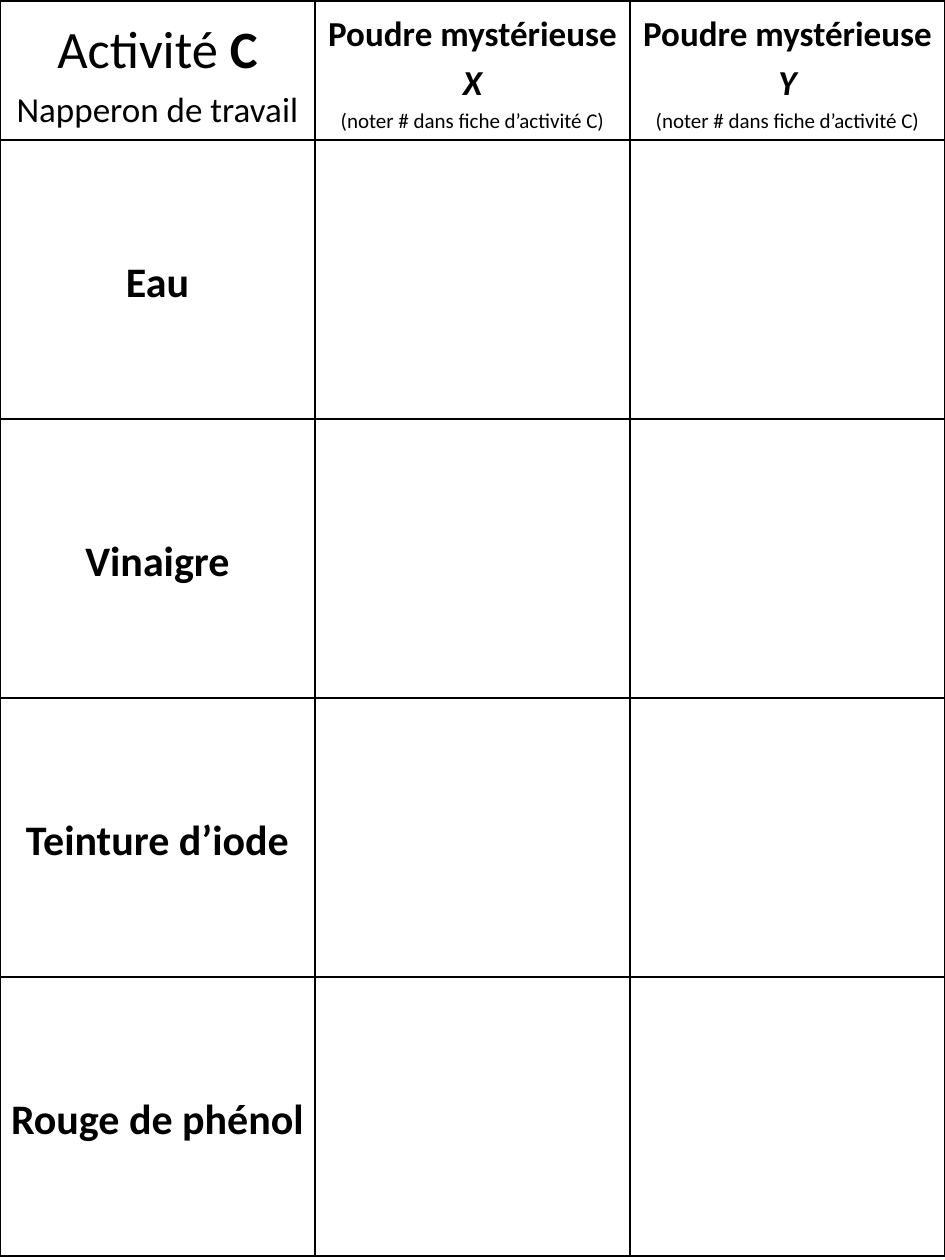
"""Build the Activité C worksheet: three columns for testing two mystery powders."""
import pptx
import pptx.dml.color
import pptx.enum.text
import pptx.oxml.ns
import pptx.util
from lxml import etree

Inches, Pt = pptx.util.Inches, pptx.util.Pt
BLACK = pptx.dml.color.RGBColor(0, 0, 0)

TITLE = {"size": Pt(30)}
TITLE_BOLD = {"size": Pt(30), "bold": True}
SUBTITLE = {"size": Pt(20)}
POWDER = {"size": Pt(20), "bold": True}
POWDER_LETTER = {"size": Pt(20), "bold": True, "italic": True}
NOTE = {"size": Pt(12)}
REAGENT = {"size": Pt(24), "bold": True}

ACTIVITY = [
    [("Activité ", TITLE), ("C", TITLE_BOLD)],
    [("Napperon de travail", SUBTITLE)],
]
POWDERS = ["X", "Y"]
REAGENTS = ["Eau", "Vinaigre", "Teinture d’iode", "Rouge de phénol"]

LEFT, TOP = 0, 0.01
COLUMN_WIDTH = 2.5
HEADER_HEIGHT, REAGENT_HEIGHT = 1.1, 2.215
BORDER_WIDTH = Pt(1)
CELL_FORMAT = {
    "vertical_anchor": pptx.enum.text.MSO_ANCHOR.MIDDLE,
    "margin_left": Inches(0.01),
    "margin_right": Inches(0.01),
    "margin_top": 0,
    "margin_bottom": 0,
}


def powder_heading(letter):
    return [
        [("Poudre mystérieuse ", POWDER), (letter, POWDER_LETTER)],
        [("(noter # dans fiche d’activité C)", NOTE)],
    ]


def add_borders(cell):
    qn = pptx.oxml.ns.qn
    properties = cell._tc.get_or_add_tcPr()
    for side in ("a:lnL", "a:lnR", "a:lnT", "a:lnB"):
        line = etree.SubElement(properties, qn(side), w=str(BORDER_WIDTH))
        fill = etree.SubElement(line, qn("a:solidFill"))
        etree.SubElement(fill, qn("a:srgbClr"), val=str(BLACK))


def write_cell(cell, lines):
    for index, runs in enumerate(lines):
        frame = cell.text_frame
        paragraph = frame.add_paragraph() if index else frame.paragraphs[0]
        paragraph.alignment = pptx.enum.text.PP_ALIGN.CENTER
        paragraph.line_spacing = 1.15
        for text, style in runs:
            run = paragraph.add_run()
            run.text = text
            run.font.color.rgb = BLACK
            font_format = {"name": "Calibri", "bold": False, "italic": False, **style}
            for attribute, value in font_format.items():
                setattr(run.font, attribute, value)


def main():
    deck = pptx.Presentation()
    deck.slide_width, deck.slide_height = Inches(7.5), Inches(10)
    worksheet = deck.slides.add_slide(deck.slide_layouts[6])

    rows = [[ACTIVITY] + [powder_heading(letter) for letter in POWDERS]]
    rows += [[[[(name, REAGENT)]]] + [[] for _ in POWDERS] for name in REAGENTS]
    heights = [HEADER_HEIGHT] + [REAGENT_HEIGHT] * len(REAGENTS)
    columns = len(rows[0])

    grid = worksheet.shapes.add_table(
        len(rows), columns, Inches(LEFT), Inches(TOP),
        Inches(COLUMN_WIDTH * columns), Inches(sum(heights)),
    ).table
    grid.first_row = grid.horz_banding = False
    for column in grid.columns:
        column.width = Inches(COLUMN_WIDTH)
    for row, height, contents in zip(grid.rows, heights, rows):
        row.height = Inches(height)
        for cell, lines in zip(row.cells, contents):
            for attribute, value in CELL_FORMAT.items():
                setattr(cell, attribute, value)
            add_borders(cell)
            cell.fill.background()
            write_cell(cell, lines)

    deck.save("out.pptx")


if __name__ == "__main__":
    main()
